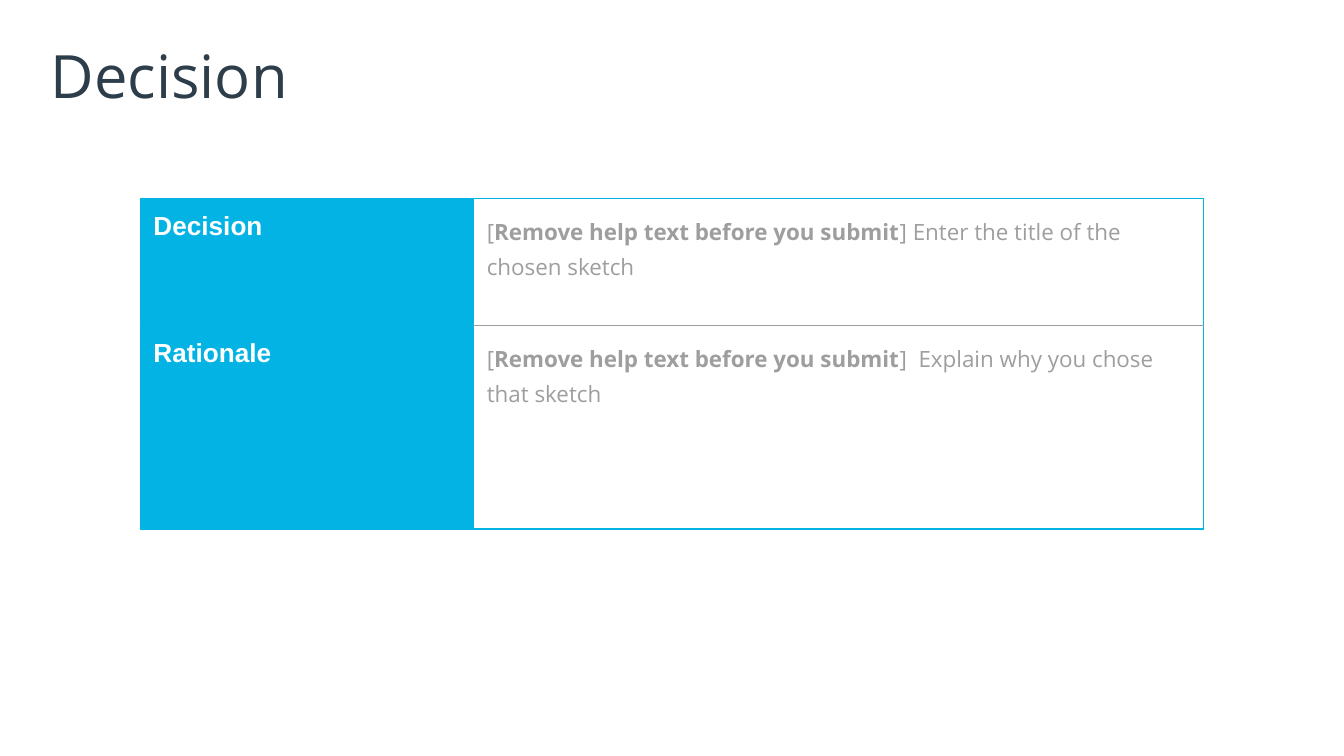
from dataclasses import dataclass

from lxml import etree
from pptx import Presentation
from pptx.dml.color import RGBColor
from pptx.enum.text import MSO_ANCHOR, MSO_AUTO_SIZE, PP_ALIGN
from pptx.oxml.ns import qn
from pptx.util import Cm, Pt

LEFT, TOP, MIDDLE = PP_ALIGN.LEFT, MSO_ANCHOR.TOP, MSO_ANCHOR.MIDDLE
NO_FIT = MSO_AUTO_SIZE.NONE
SIDES = ("left", "right", "top", "bottom")


@dataclass(frozen=True)
class Theme:
    accent: str = "02B3E4"
    grey: str = "9E9E9E"
    title: tuple = ("Open Sans", 32, "2D3D4A", False)
    label: tuple = ("Arial", 14, "FFFFFF", True)
    help: tuple = ("Open Sans", 12, "9E9E9E", False)
    strong: tuple = ("Open Sans", 12, "9E9E9E", True)
    line: float = 0.75


def apply(item, values):
    for name, value in values.items():
        setattr(item, name, value)


class Deck:
    """Hold the theme and current slide, and add its elements."""

    def __init__(self, theme):
        self.theme = theme
        self.file = Presentation()
        apply(self.file, {"slide_width": Cm(25.4), "slide_height": Cm(14.29)})
        self.slide = self.file.slides.add_slide(self.file.slide_layouts[5])

    def text(self, para, runs, **form):
        apply(para, {"alignment": LEFT, **form})
        for words, (face, size, tint, bold) in runs:
            run = para.add_run()
            run.text = words
            apply(run.font, {"name": face, "size": Pt(size), "bold": bold})
            run.font.color.rgb = RGBColor.from_string(tint)

    def title(self, words, box):
        shape = self.slide.shapes.title
        apply(shape, dict(zip(("left", "top", "width", "height"), map(Cm, box))))
        frame = shape.text_frame
        apply(frame, {f"margin_{side}": Cm(0.1) for side in SIDES})
        apply(frame, {"word_wrap": True, "auto_size": NO_FIT,
                      "vertical_anchor": MIDDLE})
        self.text(frame.paragraphs[0], [(words, self.theme.title)])

    def edge(self, cell, side, tint):
        line = etree.SubElement(cell._tc.get_or_add_tcPr(), qn(f"a:ln{side}"),
                                w=str(Pt(self.theme.line)))
        fill = etree.SubElement(line, qn("a:solidFill"))
        etree.SubElement(fill, qn("a:srgbClr"), val=tint)

    def cell(self, cell, runs, edges, fill=None, **form):
        apply(cell, {f"margin_{side}": Cm(0.25) for side in SIDES})
        cell.vertical_anchor = TOP
        for side, tint in zip("LRTB", edges):
            self.edge(cell, side, tint)
        if fill:
            cell.fill.solid()
            cell.fill.fore_color.rgb = RGBColor.from_string(fill)
        else:
            cell.fill.background()
        self.text(cell.text_frame.paragraphs[0], runs, **form)

    def table(self, rows, spot, wide, high):
        look = self.theme
        grid = self.slide.shapes.add_table(
            len(rows), len(wide), *map(Cm, (*spot, sum(wide), sum(high)))).table
        apply(grid, {"first_row": False, "horz_banding": False})
        for col, size in zip(grid.columns, wide):
            col.width = Cm(size)
        for row, size in zip(grid.rows, high):
            row.height = Cm(size)
        last = len(rows) - 1
        for i, (label, lead, rest) in enumerate(rows):
            self.cell(grid.cell(i, 0), [(label, look.label)],
                      [look.accent] * 4, look.accent)
            edges = (look.accent, look.accent,
                     look.grey if i else look.accent,
                     look.grey if i < last else look.accent)
            runs = [("[", look.help), (lead, look.strong), (rest, look.help)]
            self.cell(grid.cell(i, 1), runs, edges,
                      line_spacing=1.15, space_before=Pt(7))


def main():
    deck = Deck(Theme())
    deck.title("Decision", (0.86, 0.61, 23.67, 1.6))
    lead = "Remove help text before you submit"
    deck.table([("Decision", lead, "] Enter the title of the chosen sketch"),
                ("Rationale", lead, "]  Explain why you chose that sketch")],
               (2.65, 3.75), (6.3, 13.8), (2.4, 3.85))
    deck.file.save("out.pptx")


if __name__ == "__main__":
    main()
